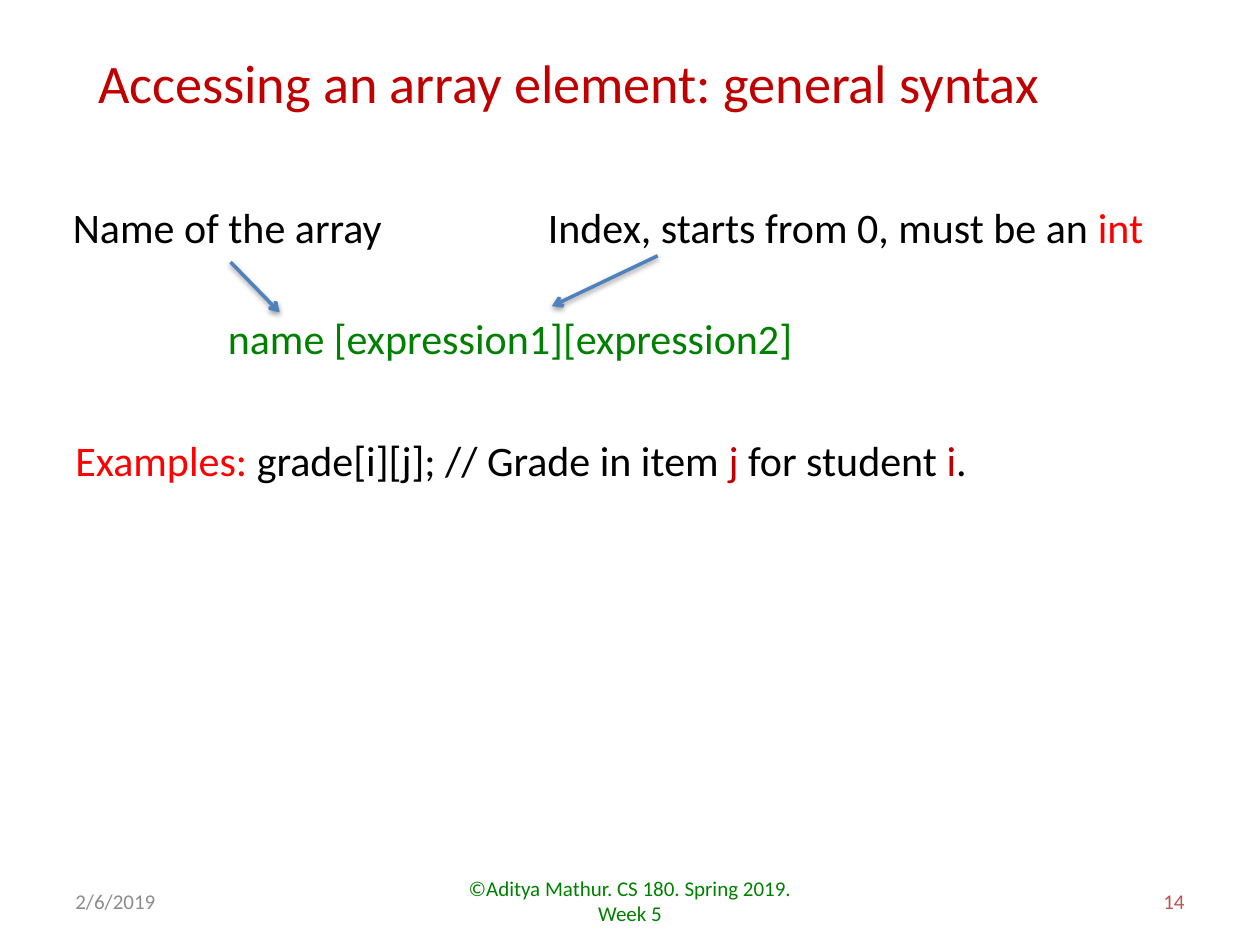
from lxml import etree
from pptx import Presentation
from pptx import util as u
from pptx.dml.color import RGBColor
from pptx.enum import text
from pptx.oxml.ns import qn

BLACK, RED, DARK_RED, GREEN = "000000", "FF0000", "C00000", "008000"
GREY, ROSE, BLUE = "8C8C8C", "C0504D", "4F81BD"
GROW = text.MSO_AUTO_SIZE.SHAPE_TO_FIT_TEXT
MIDDLE = text.MSO_ANCHOR.MIDDLE


def rgb(value):
    """Turn a hex string into a colour."""
    return RGBColor.from_string(value)


def add_text(shapes, box, runs, size=24, align=text.PP_ALIGN.LEFT, **frame):
    """Place one paragraph of (wording, colour) runs in a box."""
    tf = shapes.add_textbox(*map(u.Inches, box)).text_frame
    for name, value in {"word_wrap": True, "auto_size": GROW, **frame}.items():
        setattr(tf, name, value)
    p = tf.paragraphs[0]
    p.alignment = align
    for wording, color in runs:
        r = p.add_run()
        r.text = wording
        for name, value in {"name": "Calibri", "size": u.Pt(size)}.items():
            setattr(r.font, name, value)
        r.font.color.rgb = rgb(color)
    return p


def add_arrow(shapes, start, end):
    """Draw a blue arrow with a soft shadow below it."""
    sp = shapes.add_connector(1, *map(u.Inches, start + end))
    sp.line.color.rgb = rgb(BLUE)
    sp.line.width = u.Pt(2)
    etree.SubElement(sp.line._get_or_add_ln(), qn("a:tailEnd"), type="arrow")
    effects = etree.SubElement(sp._element.spPr, qn("a:effectLst"))
    shadow = etree.SubElement(effects, qn("a:outerShdw"), blurRad=str(u.Pt(3.1)),
                              dist=str(u.Pt(1.6)), dir="5400000", rotWithShape="0")
    color = etree.SubElement(shadow, qn("a:srgbClr"), val=BLACK)
    etree.SubElement(color, qn("a:alpha"), val="38000")


def add_callout(s, box, runs, start, end):
    """Group a label with the arrow that leaves it."""
    group = s.shapes.add_group_shape()
    add_text(group.shapes, box, runs, word_wrap=False)
    add_arrow(group.shapes, start, end)


def add_syntax(s, box):
    """Place the general syntax line with its hanging indent."""
    p = add_text(s.shapes, box, [("name [expression1][expression2]", GREEN)])
    for name, value in {"marL": 0.38, "indent": -0.38}.items():
        p._p.get_or_add_pPr().set(name, str(u.Inches(value)))


def add_footer(s, box):
    """Place date, course and slide number along the footer box."""
    left, top, width, height = box
    side, middle = 2.33, 3.17
    align = text.PP_ALIGN
    parts = [
        (left, side, "2/6/2019", GREY, align.LEFT),
        (left + (width - middle) / 2, middle,
         "©Aditya Mathur. CS 180. Spring 2019. Week 5", GREEN, align.CENTER),
        (left + width - side, side, "14", ROSE, align.RIGHT),
    ]
    for x, w, wording, color, side_align in parts:
        add_text(s.shapes, (x, top, w, height), [(wording, color)], 12, side_align,
                 auto_size=text.MSO_AUTO_SIZE.NONE, vertical_anchor=MIDDLE)


def main():
    """Build the slide and save it."""
    prs = Presentation()
    prs.slide_width, prs.slide_height = u.Inches(10), u.Inches(7.5)
    s = prs.slides.add_slide(prs.slide_layouts[6])
    add_text(s.shapes, (0.68, 0.34, 8.95, 0.62),
             [("Accessing an array element: general syntax", DARK_RED)], 31)
    add_syntax(s, (1.71, 2.43, 5.21, 0.5))
    add_callout(s, (0.48, 1.55, 2.68, 0.5), [("Name of the array", BLACK)],
                (1.83, 2.08), (2.22, 2.48))
    add_callout(s, (4.25, 1.55, 4.97, 0.5),
                [("Index, starts from 0, must be an ", BLACK), ("int", RED)],
                (5.22, 2.03), (4.38, 2.43))
    add_text(s.shapes, (0.5, 3.4, 7.89, 0.5), [
        ("Examples: ", RED), ("grade[i][j]; // Grade in item", BLACK),
        (" j ", DARK_RED), ("for student ", BLACK), ("i", DARK_RED), (".", BLACK)])
    add_footer(s, (0.5, 6.95, 9, 0.4))
    prs.save("out.pptx")


if __name__ == "__main__":
    main()
